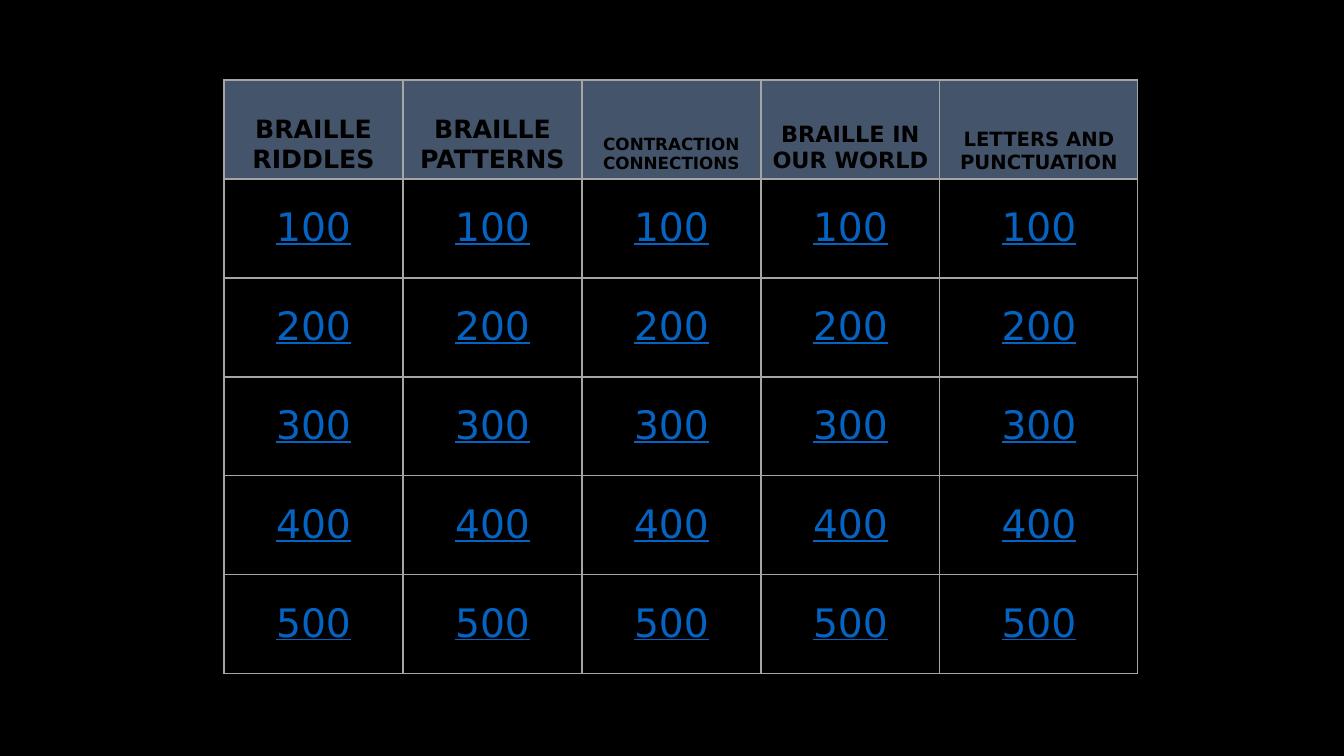
from lxml import etree
from pptx import Presentation
from pptx import util as u
from pptx.dml.color import RGBColor
from pptx.enum import text
from pptx.oxml.ns import qn

SCALE = 914400 / 100.8
FONT = "DejaVu Sans"
COLORS = {"back": "000000", "head": "44546A", "ink": "000000",
          "link": "0563C1", "rule": "A5A5A5"}
TOPICS = [("BRAILLE RIDDLES", 18), ("BRAILLE PATTERNS", 18),
          ("CONTRACTION CONNECTIONS", 12), ("BRAILLE IN OUR WORLD", 16),
          ("LETTERS AND PUNCTUATION", 14)]
POINTS = [100, 200, 300, 400, 500]
WIDTHS = [179, 179, 179, 179, 198]
HEIGHT = 99
LEFT, TOP = 224, 80


def px(n):
    return u.Emu(round(n * SCALE))


def rgb(name):
    return RGBColor.from_string(COLORS[name])


def paint(fill, name):
    fill.solid()
    fill.fore_color.rgb = rgb(name)


def frame(cell, base):
    """Rule all four sides, with the bottom one base points wide."""
    props = cell._tc.get_or_add_tcPr()
    for side, width in (("L", 1), ("R", 1), ("T", 1), ("B", base)):
        line = etree.SubElement(props, qn("a:ln" + side), w=str(u.Pt(width)))
        fill = etree.SubElement(line, qn("a:solidFill"))
        etree.SubElement(fill, qn("a:srgbClr"), val=COLORS["rule"])


def write(cell, words, size, color, bold=False, under=False):
    para = cell.text_frame.paragraphs[0]
    para.alignment = text.PP_ALIGN.CENTER
    run = para.add_run()
    run.text = words
    font = run.font
    font.name, font.size = FONT, u.Pt(size)
    font.bold, font.underline = bold, under
    font.color.rgb = rgb(color)


def add_board(slide):
    rows = len(POINTS) + 1
    table = slide.shapes.add_table(
        rows, len(WIDTHS), px(LEFT), px(TOP),
        px(sum(WIDTHS)), px(HEIGHT * rows)).table
    table.first_row = table.horz_banding = False
    for row in table.rows:
        row.height = px(HEIGHT)
    for col, (topic, size) in enumerate(TOPICS):
        table.columns[col].width = px(WIDTHS[col])
        head = table.cell(0, col)
        frame(head, 2)
        paint(head.fill, "head")
        head.vertical_anchor = text.MSO_ANCHOR.BOTTOM
        write(head, topic, size, "ink", bold=True)
        for row, score in enumerate(POINTS, 1):
            cell = table.cell(row, col)
            frame(cell, 1)
            paint(cell.fill, "back")
            cell.vertical_anchor = text.MSO_ANCHOR.MIDDLE
            write(cell, str(score), 28, "link", under=True)


def main():
    deck = Presentation()
    deck.slide_width, deck.slide_height = px(1344), px(756)
    slide = deck.slides.add_slide(deck.slide_layouts[6])
    paint(slide.background.fill, "back")
    add_board(slide)
    deck.save("out.pptx")


if __name__ == "__main__":
    main()
